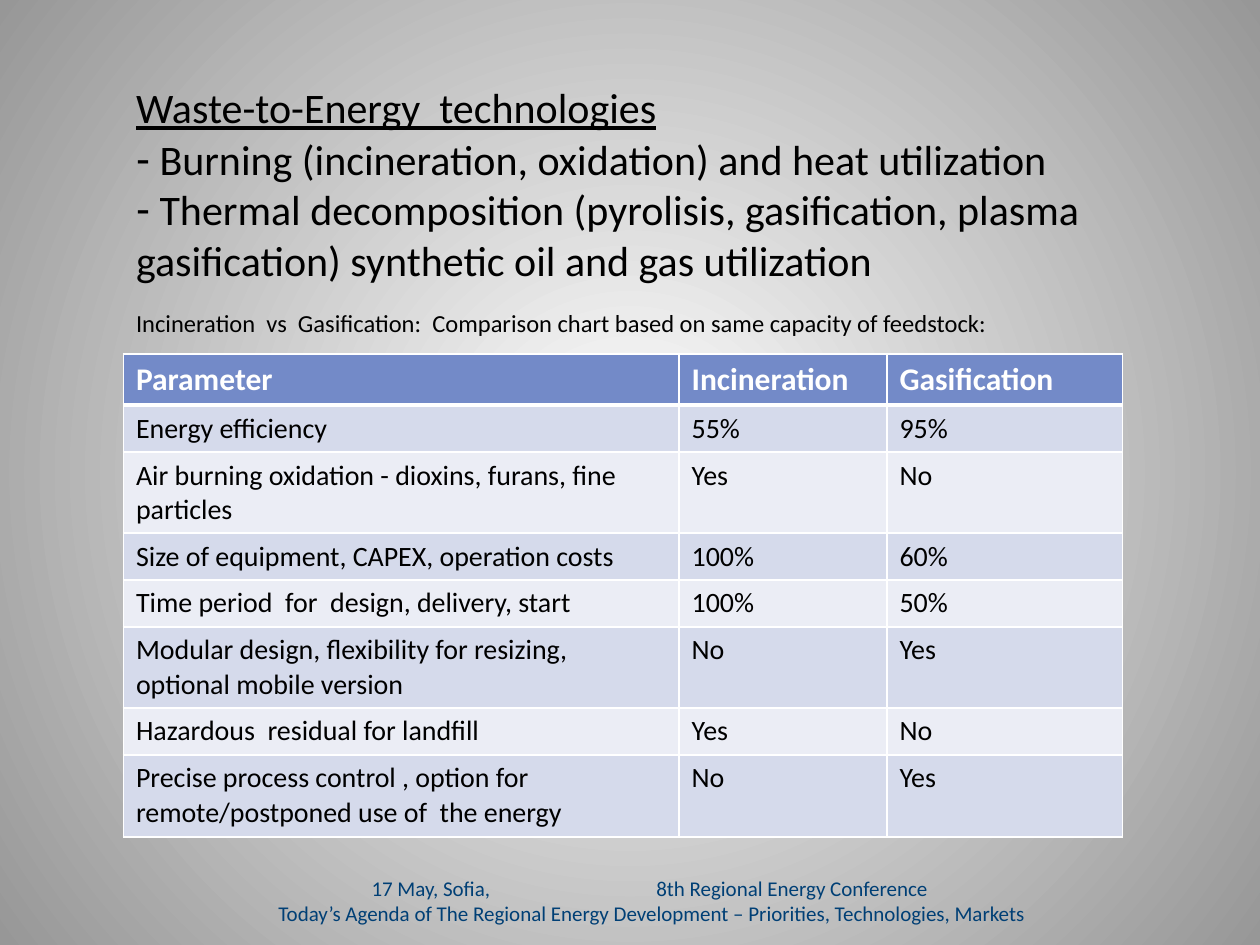
from typing import NamedTuple

from lxml import etree
from pptx import Presentation
from pptx.dml.color import RGBColor
from pptx.enum.text import MSO_ANCHOR, MSO_AUTO_SIZE, PP_ALIGN
from pptx.oxml.ns import qn
from pptx.util import Inches, Pt

LEFT, CENTER = PP_ALIGN.LEFT, PP_ALIGN.CENTER
TOP, MIDDLE = MSO_ANCHOR.TOP, MSO_ANCHOR.MIDDLE
NO_AUTOFIT = MSO_AUTO_SIZE.NONE

FONT = "Calibri"
BLACK, WHITE, NAVY = "000000", "FFFFFF", "003F75"
HEADER_FILL = "738AC8"
BAND_FILLS = ("D5DAEB", "EBEDF5")
COLUMN_WIDTHS = (4.41, 1.65, 1.87)


class Comparison(NamedTuple):
    parameter: str
    incineration: str
    gasification: str
    height: float = 0.37


HEADER = Comparison("Parameter", "Incineration", "Gasification", 0.39)
COMPARISONS = (
    Comparison("Energy efficiency", "55%", "95%"),
    Comparison("Air burning oxidation - dioxins, furans, fine particles", "Yes", "No", 0.63),
    Comparison("Size of equipment, CAPEX, operation costs", "100%", "60%"),
    Comparison("Time period  for  design, delivery, start", "100%", "50%"),
    Comparison("Modular design, flexibility for resizing, optional mobile version",
               "No", "Yes", 0.63),
    Comparison("Hazardous  residual for landfill", "Yes", "No"),
    Comparison("Precise process control , option for remote/postponed use of  the energy",
               "No", "Yes", 0.65),
)
TECHNOLOGIES = (
    " Burning (incineration, oxidation) and heat utilization",
    " Thermal decomposition (pyrolisis, gasification, plasma gasification)"
    " synthetic oil and gas utilization",
)
CAPTION = "Incineration  vs  Gasification:  Comparison chart based on same capacity of feedstock:"


def rgb(color: str) -> RGBColor:
    return RGBColor.from_string(color)


def style(paragraph, size: float, color: str = BLACK, bold: bool = False,
          align=LEFT) -> None:
    paragraph.alignment = align
    font = paragraph.font
    font.name, font.size, font.bold = FONT, Pt(size), bold
    font.color.rgb = rgb(color)


def place(shape, left: float, top: float, width: float, height: float,
          anchor=TOP) -> None:
    shape.left, shape.top = Inches(left), Inches(top)
    shape.width, shape.height = Inches(width), Inches(height)
    frame = shape.text_frame
    frame.word_wrap, frame.auto_size = True, NO_AUTOFIT
    frame.vertical_anchor = anchor


def set_bullet(paragraph, character: str | None) -> None:
    properties = paragraph._p.get_or_add_pPr()
    properties.set("marL", "0")
    properties.set("indent", "0")
    if character:
        etree.SubElement(properties, qn("a:buChar"), char=character)
    else:
        etree.SubElement(properties, qn("a:buNone"))


def set_tabs(paragraph, *positions: float) -> None:
    tabs = etree.SubElement(paragraph._p.get_or_add_pPr(), qn("a:tabLst"))
    for position in positions:
        etree.SubElement(tabs, qn("a:tab"), pos=str(Inches(position)), algn="l")


def paint_background(slide) -> None:
    fill = slide.background.fill
    fill.gradient()
    for stop, (position, color) in zip(fill.gradient_stops, ((0, WHITE), (1, "979797"))):
        stop.position = position
        stop.color.rgb = rgb(color)
    gradient = slide.background._cSld.find(".//" + qn("a:gradFill"))
    gradient.remove(gradient.find(qn("a:lin")))
    circle = etree.SubElement(gradient, qn("a:path"), path="circle")
    etree.SubElement(circle, qn("a:fillToRect"), l="50000", t="50000", r="50000", b="50000")


def set_borders(cell, top: float, bottom: float) -> None:
    properties = cell._tc.get_or_add_tcPr()
    for side, width in (("L", 1), ("R", 1), ("T", top), ("B", bottom)):
        line = etree.SubElement(properties, qn(f"a:ln{side}"), w=str(Pt(width)))
        solid = etree.SubElement(line, qn("a:solidFill"))
        etree.SubElement(solid, qn("a:srgbClr"), val=WHITE)


def add_comparison_table(slide) -> None:
    rows = (HEADER, *COMPARISONS)
    table = slide.shapes.add_table(
        len(rows), len(COLUMN_WIDTHS), Inches(0.98), Inches(2.81),
        Inches(sum(COLUMN_WIDTHS)), Inches(sum(row.height for row in rows))).table
    for column, width in zip(table.columns, COLUMN_WIDTHS):
        column.width = Inches(width)
    for index, row in enumerate(rows):
        table.rows[index].height = Inches(row.height)
        is_header = index == 0
        fill = HEADER_FILL if is_header else BAND_FILLS[(index - 1) % 2]
        for column, wording in enumerate(row[:3]):
            cell = table.cell(index, column)
            set_borders(cell, 3 if index == 1 else 1, 3 if is_header else 1)
            cell.fill.solid()
            cell.fill.fore_color.rgb = rgb(fill)
            cell.text = wording
            style(cell.text_frame.paragraphs[0], 18 if is_header else 16,
                  WHITE if is_header else BLACK, bold=is_header)


def add_heading(slide) -> None:
    heading = slide.shapes.title
    place(heading, 0.98, 0.6, 8.19, 0.5)
    heading.text_frame.text = "Waste-to-Energy  technologies"
    paragraph = heading.text_frame.paragraphs[0]
    style(paragraph, 24)
    paragraph.font.underline = True


def add_technologies(slide) -> None:
    technologies = slide.placeholders[1]
    place(technologies, 0.98, 1.01, 8.19, 1.75)
    technologies.text_frame.text = "\n".join((*TECHNOLOGIES, CAPTION))
    for paragraph in technologies.text_frame.paragraphs:
        is_caption = paragraph.text == CAPTION
        set_bullet(paragraph, None if is_caption else "-")
        style(paragraph, 14 if is_caption else 24)
        paragraph.space_before = Pt(13 if is_caption else 0)


def add_conference_footer(slide) -> None:
    footer = slide.shapes.add_textbox(0, 0, 0, 0)
    place(footer, 1.12, 6.95, 8.11, 0.4, MIDDLE)
    footer.text_frame.text = (
        "\t17 May, Sofia,\t8th Regional Energy Conference\n"
        "Today’s Agenda of The Regional Energy Development – Priorities, Technologies, Markets")
    event, agenda = footer.text_frame.paragraphs
    set_tabs(event, 1.73, 3.99)
    style(event, 12, NAVY)
    style(agenda, 12, NAVY, align=CENTER)


def main() -> None:
    presentation = Presentation()
    presentation.slide_width, presentation.slide_height = Inches(10), Inches(7.5)
    slide = presentation.slides.add_slide(presentation.slide_layouts[1])
    paint_background(slide)
    add_conference_footer(slide)
    add_heading(slide)
    add_technologies(slide)
    add_comparison_table(slide)
    presentation.save("out.pptx")


if __name__ == "__main__":
    main()
